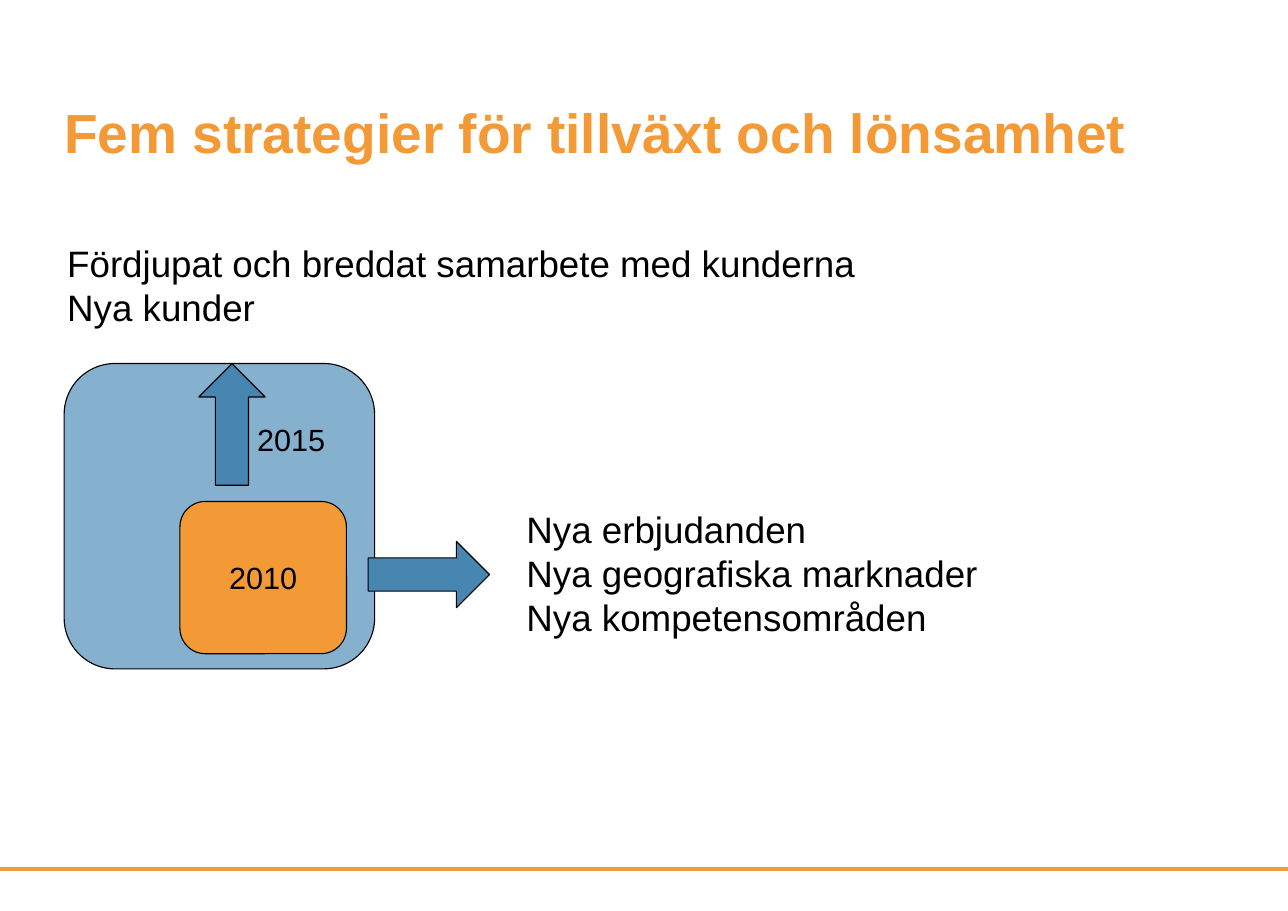
import pptx
import pptx.dml.color
import pptx.enum.shapes
import pptx.enum.text
import pptx.oxml
import pptx.util
from pptx.util import Cm

ORANGE = "F39936"
LIGHT_BLUE = "85B0CE"
BLUE = "4886B2"
BLACK = "000000"
SHAPES = pptx.enum.shapes.MSO_SHAPE
ALIGN = pptx.enum.text.PP_ALIGN
ANCHOR = pptx.enum.text.MSO_ANCHOR


def color(hex_text):
    return pptx.dml.color.RGBColor.from_string(hex_text)


def write(shape, text, size=24, fill=BLACK, bold=False, align=ALIGN.LEFT,
          anchor=ANCHOR.TOP, insets=(0.25, 0.13, 0.25, 0.13)):
    frame = shape.text_frame
    frame.word_wrap = True
    frame.vertical_anchor = anchor
    frame.margin_left, frame.margin_top, frame.margin_right, frame.margin_bottom = map(Cm, insets)
    frame.text = text
    for paragraph in frame.paragraphs:
        paragraph.alignment = align
        paragraph.font.name = "Arial"
        paragraph.font.size = pptx.util.Pt(size)
        paragraph.font.bold = bold
        paragraph.font.color.rgb = color(fill)


def add_text(slide, box, text, **text_format):
    write(slide.shapes.add_textbox(*map(Cm, box)), text, **text_format)


def add_block(slide, kind, box, fill, rotation=0):
    block = slide.shapes.add_shape(kind, *map(Cm, box))
    block.shadow.inherit = False
    block.rotation = rotation
    block.fill.solid()
    block.fill.fore_color.rgb = color(fill)
    block.line.color.rgb = color(BLACK)
    block.line.width = pptx.util.Pt(0.75)
    return block


def add_rule(slide, y, width):
    rule = slide.shapes.add_connector(
        pptx.enum.shapes.MSO_CONNECTOR.STRAIGHT, 0, Cm(y), width, Cm(y))
    rule.line.color.rgb = color(ORANGE)
    rule.line.width = pptx.util.Pt(2.75)
    rule._element.spPr.append(pptx.oxml.parse_xml(
        '<a:effectLst xmlns:a="http://schemas.openxmlformats.org/drawingml/2006/main"/>'))


def main():
    deck = pptx.Presentation()
    deck.slide_width, deck.slide_height = Cm(29.7), Cm(21)
    slide = deck.slides.add_slide(deck.slide_layouts[6])

    add_rule(slide, 20.03, deck.slide_width)
    add_text(slide, (1.48, 2.26, 27.58, 3.18), "Fem strategier för tillväxt och lönsamhet",
             size=36, fill=ORANGE, bold=True, insets=(0, 0, 0, 0))

    future = add_block(slide, SHAPES.ROUNDED_RECTANGLE, (1.48, 8.38, 7.16, 7.04), LIGHT_BLUE)
    write(future, "2015", size=20, align=ALIGN.CENTER, insets=(3.56, 0.98, 0.25, 0.13))
    today = add_block(slide, SHAPES.ROUNDED_RECTANGLE, (4.15, 11.56, 3.84, 3.51), ORANGE)
    write(today, "2010", size=20, align=ALIGN.CENTER, anchor=ANCHOR.MIDDLE)

    add_block(slide, SHAPES.RIGHT_ARROW, (3.95, 9.02, 2.8, 1.53), BLUE, rotation=270)
    add_text(slide, (1.3, 5.41, 21.41, 2.31),
             "Fördjupat och breddat samarbete med kunderna\nNya kunder")
    add_block(slide, SHAPES.RIGHT_ARROW, (8.49, 12.48, 2.8, 1.53), BLUE)
    add_text(slide, (11.89, 11.56, 12.5, 3.33),
             "Nya erbjudanden\nNya geografiska marknader\nNya kompetensområden")

    deck.save("out.pptx")


if __name__ == "__main__":
    main()
